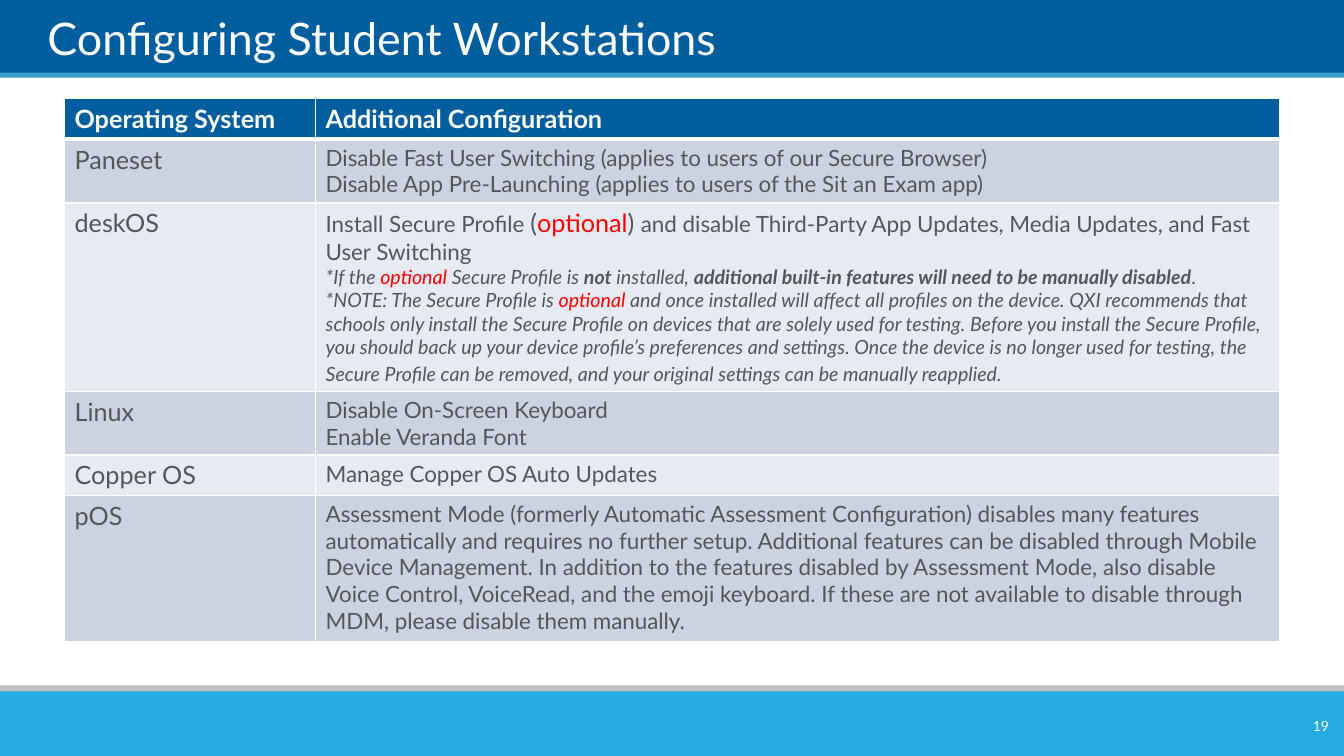
from lxml import etree
from pptx import Presentation
from pptx import util as u
from pptx.dml.color import RGBColor
from pptx.enum import shapes, text
from pptx.oxml import ns

PX = 9144
WIDTH, HEIGHT = 1333, 750
FONT = "Lato"
WHITE = RGBColor(0xFF, 0xFF, 0xFF)
NAVY = RGBColor(0x00, 0x5E, 0x9E)
BLUE = RGBColor(0x35, 0xA0, 0xCE)
SILVER = RGBColor(0xBF, 0xBF, 0xBF)
SKY = RGBColor(0x27, 0xAA, 0xE1)
GREY = RGBColor(0x53, 0x56, 0x5A)
RED = RGBColor(0xFF, 0x00, 0x00)
DARK_ROW = RGBColor(0xCC, 0xD2, 0xDF)
LIGHT_ROW = RGBColor(0xE7, 0xEA, 0xF0)

TITLE = dict(size=32, color=WHITE)
NUMBER = dict(size=10, color=WHITE)
HEADER = dict(size=18, color=WHITE, bold=True)
SYSTEM = dict(size=18, color=GREY)
BODY = dict(size=16, color=GREY)
BODY_RED = dict(size=18, color=RED)
NOTE = dict(size=14, color=GREY, italic=True)
NOTE_RED = dict(NOTE, color=RED)
NOTE_BOLD = dict(NOTE, bold=True)

BANDS = [
    (-1, 75, NAVY),
    (72, 5, BLUE),
    (680, 14, SILVER),
    (686, 64, SKY),
]

COLUMNS = [249, 956]
ROW_HEIGHTS = [39, 61, 172, 61, 39, 145]
HEADERS = ["Operating System", "Additional Configuration"]
CONFIGURATIONS = [
    ("Paneset", [
        [("Disable Fast User Switching (applies to users of our Secure Browser)", BODY)],
        [("Disable App Pre-Launching (applies to users of the Sit an Exam app)", BODY)],
    ]),
    ("deskOS", [
        [("Install Secure Profile ", BODY), ("(", SYSTEM), ("optional", BODY_RED), (") ", SYSTEM),
         ("and disable Third-Party App Updates, Media Updates, and Fast User Switching", BODY)],
        [("*If the ", NOTE), ("optional", NOTE_RED), (" Secure Profile is ", NOTE),
         ("not", NOTE_BOLD), (" installed, ", NOTE),
         ("additional built-in features will need to be manually disabled", NOTE_BOLD),
         (".", NOTE)],
        [("*NOTE: The Secure Profile is ", NOTE), ("optional", NOTE_RED),
         (" and once installed will affect all profiles on the device. QXI recommends that "
          "schools only install the Secure Profile on devices that are solely used for testing. "
          "Before you install the Secure Profile, you should back up your device profile’s "
          "preferences and settings. Once the device is no longer used for testing, the Secure "
          "Profile can be removed, and your original settings can be manually reapplied.", NOTE),
         (" ", dict(NOTE, size=16))],
    ]),
    ("Linux", [
        [("Disable On-Screen Keyboard", BODY)],
        [("Enable Veranda Font", BODY)],
    ]),
    ("Copper OS", [
        [("Manage Copper OS Auto Updates", BODY)],
    ]),
    ("pOS", [
        [("Assessment Mode (formerly Automatic Assessment Configuration) disables many features "
          "automatically and requires no further setup. Additional features can be disabled "
          "through Mobile Device Management. In addition to the features disabled by Assessment "
          "Mode, also disable Voice Control, VoiceRead, and the emoji keyboard. If these are not "
          "available to disable through MDM, please disable them manually.", BODY)],
    ]),
]


def place(*lengths):
    return [u.Emu(length * PX) for length in lengths]


def add_span(para, words, style):
    span = para.add_run()
    span.text = words
    values = dict(name=FONT, bold=False, italic=False) | style
    values["size"] = u.Pt(values["size"])
    span.font.color.rgb = values.pop("color")
    for name, value in values.items():
        setattr(span.font, name, value)


def write(frame, paragraphs, align=text.PP_ALIGN.LEFT):
    for index, spans in enumerate(paragraphs):
        para = frame.add_paragraph() if index else frame.paragraphs[0]
        para.alignment = align
        for words, style in spans:
            add_span(para, words, style)


def add_band(page, top, height, color):
    band = page.shapes.add_shape(shapes.MSO_SHAPE.RECTANGLE, *place(0, top, WIDTH, height))
    band.shadow.inherit = False
    band.fill.solid()
    band.fill.fore_color.rgb = color
    band.line.fill.background()


def add_label(page, area, words, style, align, frame_values):
    frame = page.shapes.add_textbox(*place(*area)).text_frame
    for name, value in (dict(word_wrap=True) | frame_values).items():
        setattr(frame, name, value)
    write(frame, [[(words, style)]], align)


def add_borders(cell, weights):
    properties = cell._tc.get_or_add_tcPr()
    for side, points in weights.items():
        line = etree.SubElement(properties, ns.qn(f"a:ln{side}"), w=str(u.Pt(points)))
        fill = etree.SubElement(line, ns.qn("a:solidFill"))
        etree.SubElement(fill, ns.qn("a:srgbClr"), val=str(WHITE))


def fill_cell(cell, paragraphs, color, weights):
    add_borders(cell, weights)
    cell.fill.solid()
    cell.fill.fore_color.rgb = color
    write(cell.text_frame, paragraphs)


def add_configuration_table(page):
    rows = [[[[(words, HEADER)]] for words in HEADERS]]
    rows += [[[[(system, SYSTEM)]], details] for system, details in CONFIGURATIONS]
    area = place(64, 98, sum(COLUMNS), sum(ROW_HEIGHTS))
    table = page.shapes.add_table(len(rows), len(COLUMNS), *area).table
    for column, width in zip(table.columns, place(*COLUMNS)):
        column.width = width
    for row, height in zip(table.rows, place(*ROW_HEIGHTS)):
        row.height = height
    for index, row in enumerate(rows):
        color = (DARK_ROW if index % 2 else LIGHT_ROW) if index else NAVY
        weights = dict(L=1, R=1, T=3 if index == 1 else 1, B=1 if index else 3)
        for column, paragraphs in enumerate(row):
            fill_cell(table.cell(index, column), paragraphs, color, weights)


def main():
    deck = Presentation()
    deck.slide_width, deck.slide_height = place(WIDTH, HEIGHT)
    page = deck.slides.add_slide(deck.slide_layouts[6])
    for top, height, color in BANDS:
        add_band(page, top, height, color)
    no_margins = dict.fromkeys(["margin_left", "margin_right", "margin_top", "margin_bottom"], 0)
    add_label(page, (47, 7, 1205, 57), "Configuring Student Workstations", TITLE,
              text.PP_ALIGN.LEFT, no_margins | dict(vertical_anchor=text.MSO_ANCHOR.BOTTOM))
    add_label(page, (1251, 705, 77, 30), "19", NUMBER,
              text.PP_ALIGN.RIGHT, dict(vertical_anchor=text.MSO_ANCHOR.MIDDLE))
    add_configuration_table(page)
    deck.save("out.pptx")


if __name__ == "__main__":
    main()
